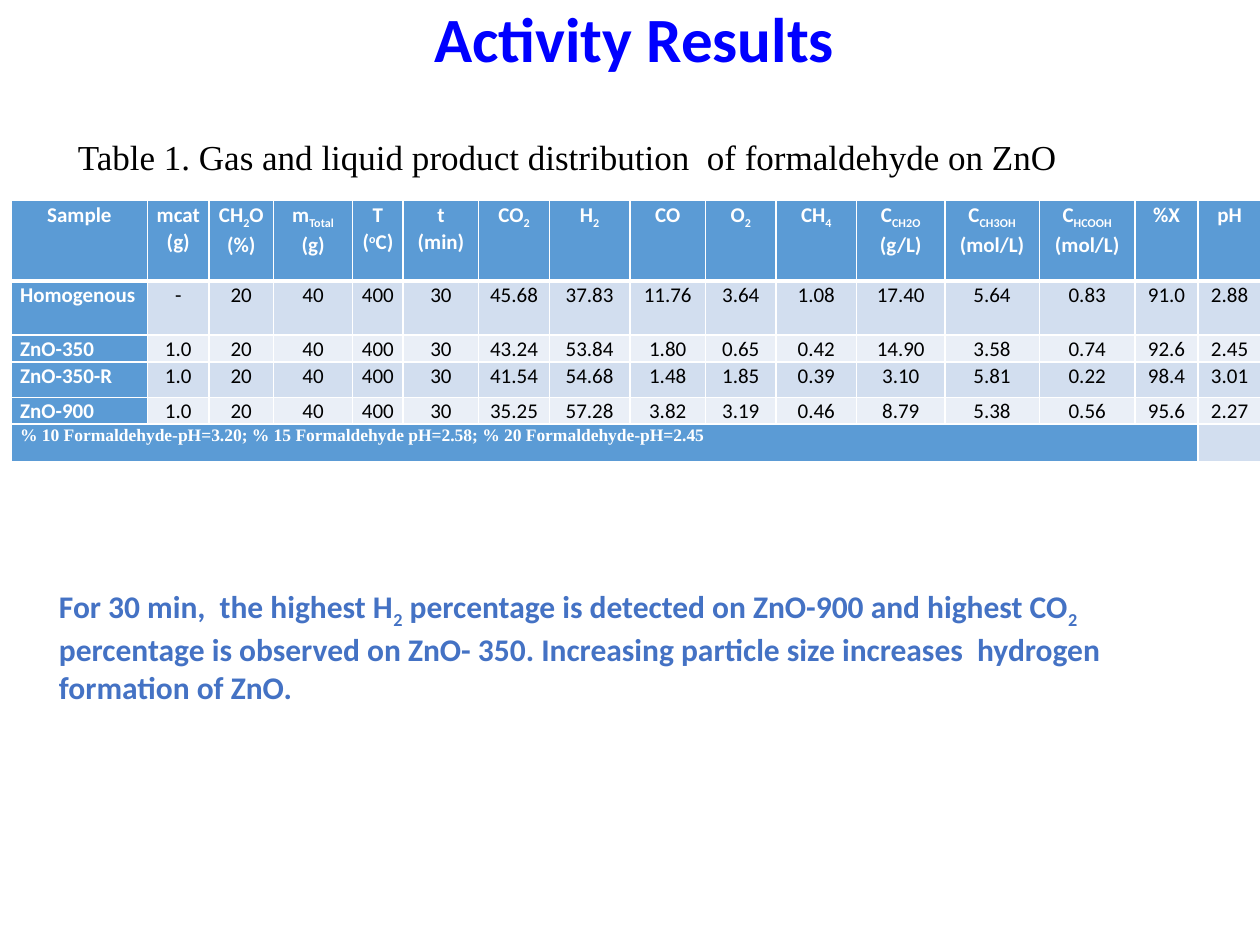
from lxml.etree import SubElement
from pptx import Presentation
from pptx.dml.color import RGBColor
from pptx.enum.text import MSO_ANCHOR, PP_ALIGN
from pptx.oxml.ns import qn
from pptx.util import Inches, Pt

WIDTH, HEIGHT = Inches(10), Inches(7.5)
COLORS = {
    "title": "0000FF",
    "caption": "000000",
    "finding": "4472C4",
    "heading": "5B9BD5",
    "odd": "D2DEEF",
    "even": "EAEFF7",
    "light": "FFFFFF",
    "dark": "000000",
}

# Subscripts stand between underscores, superscripts also start with ^.
HEADINGS = [
    "Sample", "mcat\n(g)", "CH_2_O\n(%)", "m_Total_\n(g)", "T\n(_^o_C)", "t\n(min)",
    "CO_2_", "H_2_", "CO", "O_2_", "CH_4_", "C_CH2O_\n(g/L)", "C_CH3OH_\n(mol/L)",
    "C_HCOOH_\n(mol/L)", "%X", "pH",
]
SAMPLES = [
    ("Homogenous", "- 20 40 400 30 45.68 37.83 11.76 3.64 1.08 17.40 5.64 0.83 91.0 2.88"),
    ("ZnO-350", "1.0 20 40 400 30 43.24 53.84 1.80 0.65 0.42 14.90 3.58 0.74 92.6 2.45"),
    ("ZnO-350-R", "1.0 20 40 400 30 41.54 54.68 1.48 1.85 0.39 3.10 5.81 0.22 98.4 3.01"),
    ("ZnO-900", "1.0 20 40 400 30 35.25 57.28 3.82 3.19 0.46 8.79 5.38 0.56 95.6 2.27"),
]
PH_NOTE = "% 10 Formaldehyde-pH=3.20; % 15 Formaldehyde pH=2.58; % 20 Formaldehyde-pH=2.45"
FINDING = (
    "For 30 min,  the highest H_2_ percentage is detected on ZnO-900 and highest CO_2_ "
    "percentage is observed on ZnO- 350. Increasing particle size increases  hydrogen "
    "formation of ZnO."
)
# Percent of the slide's width and height
COLUMN_SHARES = [10.8, 4.9, 5.1, 6.3, 4, 6, 5.6, 6.4, 6, 5.6, 6.4, 7, 7.5, 7.6, 5, 5]
ROW_SHARES = [8.53, 5.73, 2.8, 3.73, 2.8, 4]


def across(percent):
    return round(WIDTH * percent / 100)


def down(percent):
    return round(HEIGHT * percent / 100)


def rgb(name):
    return RGBColor.from_string(COLORS[name])


def write(frame, text, size, color, bold=False, font="Calibri",
          align=PP_ALIGN.LEFT, spacing=1.0, after=0):
    """Fill a text frame from marked text, one paragraph per line."""
    for number, line in enumerate(text.split("\n")):
        paragraph = frame.add_paragraph() if number else frame.paragraphs[0]
        paragraph.alignment = align
        paragraph.line_spacing = spacing
        paragraph.space_after = Pt(after)
        for index, part in enumerate(line.split("_")):
            if not part:
                continue
            run = paragraph.add_run()
            run.text = part.lstrip("^")
            run.font.name = font
            run.font.size = Pt(size)
            run.font.bold = bold
            run.font.color.rgb = rgb(color)
            if index % 2:
                baseline = "30000" if part.startswith("^") else "-25000"
                run.font._element.set("baseline", baseline)


def add_text(slide, place, text, size, color, anchor=MSO_ANCHOR.TOP, **style):
    left, top, width, height = place
    box = slide.shapes.add_textbox(across(left), down(top), across(width), down(height))
    box.text_frame.word_wrap = True
    box.text_frame.vertical_anchor = anchor
    write(box.text_frame, text, size, color, **style)


def set_borders(cell, top=1, bottom=1):
    properties = cell._tc.get_or_add_tcPr()
    sides = {"a:lnL": 1, "a:lnR": 1, "a:lnT": top, "a:lnB": bottom}
    for position, (side, points) in enumerate(sides.items()):
        line = SubElement(properties, qn(side), w=str(Pt(points)))
        fill = SubElement(line, qn("a:solidFill"))
        SubElement(fill, qn("a:srgbClr"), val=COLORS["light"])
        properties.insert(position, line)


def style_cell(cell, fill, **borders):
    cell.fill.solid()
    cell.fill.fore_color.rgb = rgb(fill)
    cell.margin_left = cell.margin_right = Inches(0.07)
    cell.margin_top = cell.margin_bottom = 0
    set_borders(cell, **borders)


def write_cell(cell, text, heading, align=PP_ALIGN.CENTER):
    write(cell.text_frame, text, 12, "light" if heading else "dark",
          bold=heading, align=align, spacing=1.07)


def add_results(slide):
    table = slide.shapes.add_table(
        len(ROW_SHARES), len(COLUMN_SHARES), across(0.9), down(21.2),
        across(sum(COLUMN_SHARES)), down(sum(ROW_SHARES))).table
    for column, share in zip(table.columns, COLUMN_SHARES):
        column.width = across(share)
    for row, share in zip(table.rows, ROW_SHARES):
        row.height = down(share)

    for column, heading in enumerate(HEADINGS):
        cell = table.cell(0, column)
        style_cell(cell, "heading", bottom=3)
        write_cell(cell, heading, True)

    for row, (sample, values) in enumerate(SAMPLES, start=1):
        band = "odd" if row % 2 else "even"
        for column, text in enumerate([sample, *values.split()]):
            cell = table.cell(row, column)
            first = column == 0
            style_cell(cell, "heading" if first else band, top=3 if row == 1 else 1)
            write_cell(cell, text, first, PP_ALIGN.JUSTIFY if first else PP_ALIGN.CENTER)

    last_row, last_column = len(ROW_SHARES) - 1, len(COLUMN_SHARES) - 1
    for column in range(last_column + 1):
        style_cell(table.cell(last_row, column), "odd" if column == last_column else "heading")
    note = table.cell(last_row, 0)
    note.merge(table.cell(last_row, last_column - 1))
    write(note.text_frame, PH_NOTE, 10, "light", bold=True,
          font="Times New Roman", spacing=1.07, after=8)


def main():
    presentation = Presentation()
    presentation.slide_width, presentation.slide_height = WIDTH, HEIGHT
    slide = presentation.slides.add_slide(presentation.slide_layouts[6])
    add_text(slide, (5.2, 13.6, 105.6, 5.87),
             "Table 1. Gas and liquid product distribution  of formaldehyde on ZnO",
             20, "caption", MSO_ANCHOR.MIDDLE, font="Times New Roman")
    add_text(slide, (2, -0.8, 96.7, 10.53), "Activity Results", 36, "title",
             MSO_ANCHOR.MIDDLE, bold=True, align=PP_ALIGN.CENTER, spacing=0.9)
    add_text(slide, (3.7, 61.47, 94, 13.47), FINDING, 18, "finding", bold=True)
    add_results(slide)
    presentation.save("out.pptx")


if __name__ == "__main__":
    main()
